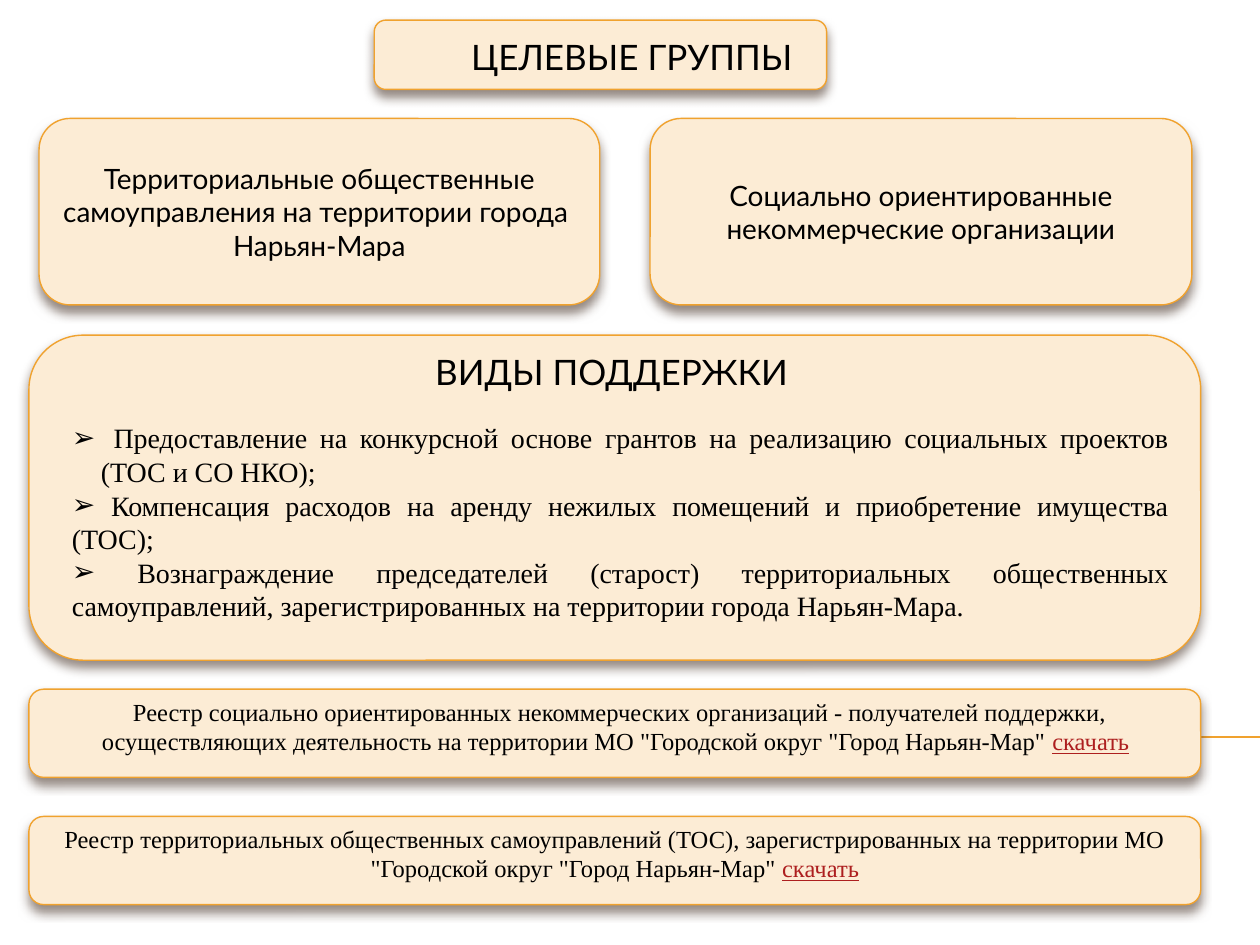
from lxml.etree import SubElement
from pptx import Presentation
from pptx.dml.color import RGBColor
from pptx.enum.shapes import MSO_CONNECTOR, MSO_SHAPE
from pptx.enum.text import MSO_ANCHOR, MSO_AUTO_SIZE, PP_ALIGN
from pptx.oxml.ns import qn
from pptx.util import Pt

PX = 9144


def px(*lengths):
    return [length * PX for length in lengths]


def paint(color_format, value):
    color_format.rgb = RGBColor.from_string(value)


class SlideBuilder:
    heading_font = "Lato"
    text_font = "Times New Roman"
    ink = "000000"
    link = "AD1F1F"
    cream = "FCECD5"
    amber = "F0A22E"
    shade = "4E3B30"

    def __init__(self, slide):
        self.slide = slide

    def rule(self, x1, y1, x2, y2):
        line = self.slide.shapes.add_connector(MSO_CONNECTOR.STRAIGHT, *px(x1, y1, x2, y2))
        paint(line.line.color, self.amber)
        line.line.width = Pt(0.75)
        SubElement(line.element.spPr, qn("a:effectLst"))

    def panel(self, *place):
        shape = self.slide.shapes.add_shape(MSO_SHAPE.ROUNDED_RECTANGLE, *px(*place))
        shape.fill.solid()
        paint(shape.fill.fore_color, self.cream)
        paint(shape.line.color, self.amber)
        shape.line.width = Pt(0.79)
        shape.shadow.inherit = False
        effects = shape.element.spPr.find(qn("a:effectLst"))
        shadow = SubElement(effects, qn("a:outerShdw"), blurRad=str(Pt(6)), dist=str(Pt(4)),
                            dir="5400000", rotWithShape="0")
        color = SubElement(shadow, qn("a:srgbClr"), val=self.shade)
        SubElement(color, qn("a:alpha"), val="60000")
        return shape

    def frame(self, shape, anchor, top=5):
        box = shape.text_frame
        box.word_wrap = True
        box.auto_size = MSO_AUTO_SIZE.NONE
        box.vertical_anchor = anchor
        box.margin_left, box.margin_top, box.margin_right, box.margin_bottom = px(10, top, 10, 5)
        return box

    def add_text(self, box, paragraphs, size, font, align=PP_ALIGN.CENTER):
        for index, runs in enumerate(paragraphs):
            para = box.paragraphs[0] if index == 0 else box.add_paragraph()
            para.alignment = align
            para.space_before = Pt(0)
            for text, color in runs:
                span = para.add_run()
                span.text = text
                span.font.name = font
                span.font.size = Pt(size)
                paint(span.font.color, color)
                span.font.underline = color == self.link

    def card(self, text_lines, *place):
        box = self.frame(self.panel(*place), MSO_ANCHOR.MIDDLE)
        self.add_text(box, [[(text, self.ink)] for text in text_lines], 16, self.heading_font)

    def text_box(self, paragraphs, size, font, place, top=5):
        shape = self.slide.shapes.add_textbox(*px(*place))
        box = self.frame(shape, MSO_ANCHOR.TOP, top)
        self.add_text(box, paragraphs, size, font)
        return box

    def place(self, holder, left, top, width, height):
        holder.left, holder.top, holder.width, holder.height = px(left, top, width, height)
        holder.element.getparent().append(holder.element)

    def title(self, text, *place):
        holder = self.slide.shapes.title
        self.place(holder, *place)
        box = self.frame(holder, MSO_ANCHOR.TOP)
        self.add_text(box, [[(text, self.ink)]], 20, self.heading_font)

    def bullets(self, items, indents, *place):
        holder = self.slide.placeholders[1]
        self.place(holder, *place)
        box = self.frame(holder, MSO_ANCHOR.MIDDLE)
        paragraphs = [[(item, self.ink)] for item in items]
        self.add_text(box, paragraphs, 16, self.text_font, PP_ALIGN.JUSTIFY)
        for para, indent in zip(box.paragraphs, indents):
            properties = para._p.get_or_add_pPr()
            properties.set("marL", str(indent * PX))
            properties.set("indent", str(-indent * PX))
            SubElement(properties, qn("a:buChar"), char="➢")

    def register(self, text_lines, *place):
        paragraphs = [[(text, self.ink)] for text in text_lines]
        paragraphs[-1].append(("скачать", self.link))
        return self.text_box(paragraphs, 14, self.text_font, place, 6)


def main():
    deck = Presentation()
    deck.slide_width, deck.slide_height = px(1000, 750)
    page = SlideBuilder(deck.slides.add_slide(deck.slide_layouts[1]))

    page.rule(56, 585, 1000, 585)
    page.panel(297, 16, 359, 55)
    page.title("ЦЕЛЕВЫЕ ГРУППЫ", 39, 23, 925, 78)

    page.card(["Территориальные общественные самоуправления на территории города ", "Нарьян-Мара"],
              31, 94, 445, 148)
    page.card(["Социально ориентированные некоммерческие организации"], 516, 94, 430, 148)

    page.panel(23, 266, 930, 258)
    page.text_box([[("ВИДЫ ПОДДЕРЖКИ", page.ink)]], 20, page.heading_font, (23, 273, 925, 78))
    page.bullets([
        " Предоставление на конкурсной основе грантов на реализацию социальных проектов (ТОС и СО НКО);",
        " Компенсация расходов на аренду нежилых помещений и приобретение имущества (ТОС);",
        " Вознаграждение председателей (старост) территориальных общественных самоуправлений, "
        "зарегистрированных на территории города Нарьян-Мара.",
    ], [23, 0, 0], 47, 328, 891, 172)

    for top in (648, 547):
        page.panel(23, top, 930, 70)
    box = page.register([
        "Реестр социально ориентированных некоммерческих организаций - получателей поддержки,",
        "осуществляющих деятельность на территории МО \"Городской округ \"Город Нарьян-Мар\" ",
    ], 16, 547, 945, 76)
    box.paragraphs[0]._p.get_or_add_pPr().set("indent", str(7 * PX))
    page.register([
        "Реестр территориальных общественных самоуправлений (ТОС), зарегистрированных на территории МО "
        "\"Городской округ \"Город Нарьян-Мар\" ",
    ], 23, 648, 930, 81)

    deck.save("out.pptx")


if __name__ == "__main__":
    main()
